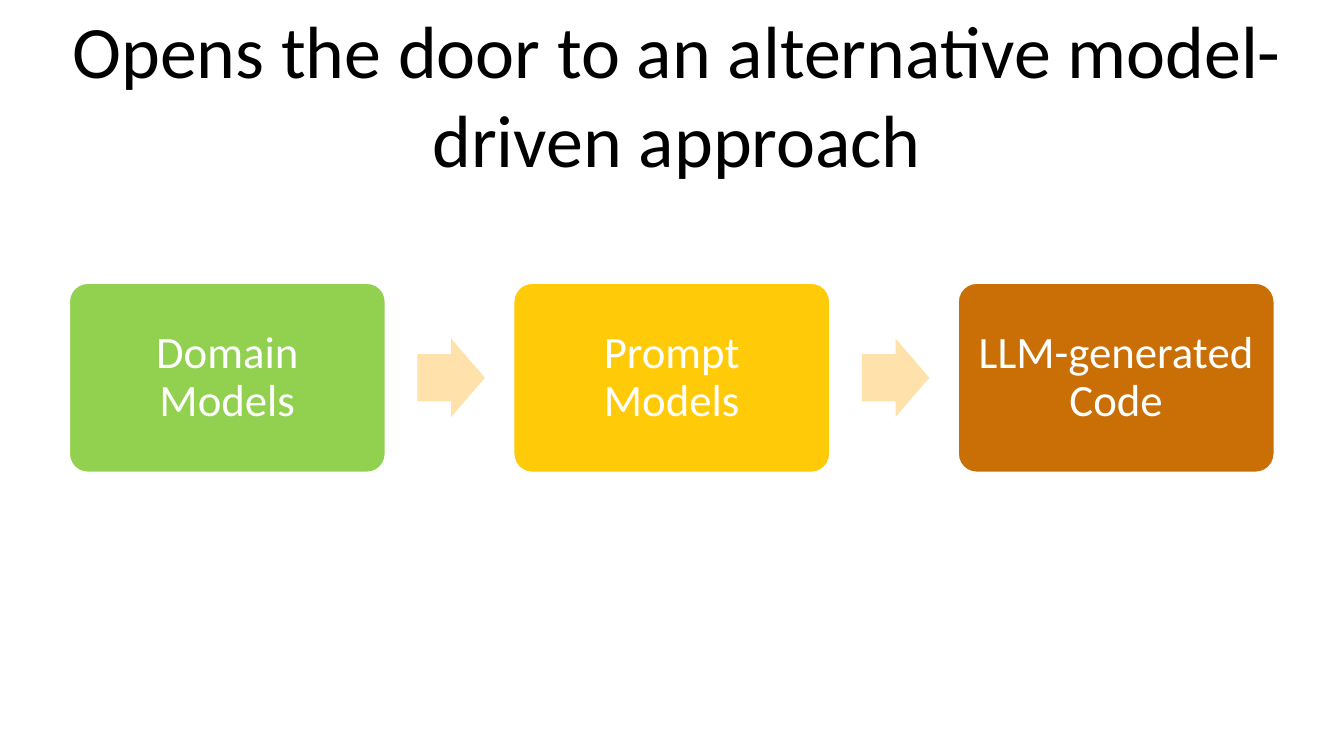
from dataclasses import dataclass

from pptx import Presentation
from pptx.dml.color import RGBColor
from pptx.enum.shapes import MSO_SHAPE
from pptx.enum.text import MSO_ANCHOR, MSO_AUTO_SIZE, PP_ALIGN
from pptx.util import Cm, Pt


@dataclass(frozen=True)
class Theme:
    font: str = "Calibri"
    title: float = 52.8
    label: float = 32
    black: str = "000000"
    white: str = "FFFFFF"
    green: str = "92D050"
    gold: str = "FFCA08"
    brown: str = "CA6F06"
    cream: str = "FFE1AB"


THEME = Theme()
LEFT, TOP, STEP = 1.73, 7.12, 11.2
BOX_W, BOX_H = 8, 4.8
ARROW_W, ARROW_H, ARROW_X = 1.7, 1.98, 8.79


def write(frame, text, size, color):
    frame.word_wrap = True
    frame.auto_size = MSO_AUTO_SIZE.NONE
    frame.vertical_anchor = MSO_ANCHOR.MIDDLE
    frame.text = text
    para = frame.paragraphs[0]
    para.alignment = PP_ALIGN.CENTER
    para.font.name = THEME.font
    para.font.size = Pt(size)
    para.font.color.rgb = RGBColor.from_string(color)
    return para


def add_title(slide, text):
    title = slide.shapes.title
    title.left, title.top = Cm(0), Cm(0.76)
    title.width, title.height = Cm(34.11), Cm(3.18)
    write(title.text_frame, text, THEME.title, THEME.black)


def add_solid(slide, kind, left, top, width, height, fill):
    shape = slide.shapes.add_shape(kind, Cm(left), Cm(top), Cm(width), Cm(height))
    shape.shadow.inherit = False
    shape.fill.solid()
    shape.fill.fore_color.rgb = RGBColor.from_string(fill)
    return shape


def add_stage(slide, left, text, fill):
    box = add_solid(slide, MSO_SHAPE.ROUNDED_RECTANGLE, left, TOP, BOX_W, BOX_H, fill)
    box.adjustments[0] = 0.1
    box.line.color.rgb = RGBColor.from_string(THEME.white)
    box.line.width = Pt(2)
    frame = box.text_frame
    frame.margin_left = frame.margin_right = Cm(0.35)
    frame.margin_top = frame.margin_bottom = Cm(0.35)
    write(frame, text, THEME.label, THEME.white).line_spacing = 0.9


def add_arrow(slide, left):
    top = TOP + (BOX_H - ARROW_H) / 2
    arrow = add_solid(slide, MSO_SHAPE.RIGHT_ARROW, left, top, ARROW_W, ARROW_H, THEME.cream)
    arrow.adjustments[0] = 0.6
    arrow.adjustments[1] = 0.5
    arrow.line.fill.background()


def main():
    deck = Presentation()
    deck.slide_width, deck.slide_height = Cm(33.87), Cm(19.05)
    slide = deck.slides.add_slide(deck.slide_layouts[5])
    add_title(slide, "Opens the door to an alternative model-driven approach")
    stages = [
        ("Domain Models", THEME.green),
        ("Prompt Models", THEME.gold),
        ("LLM-generated Code", THEME.brown),
    ]
    for i, (text, fill) in enumerate(stages):
        left = LEFT + i * STEP
        add_stage(slide, left, text, fill)
        if i < len(stages) - 1:
            add_arrow(slide, left + ARROW_X)
    deck.save("out.pptx")


if __name__ == "__main__":
    main()
